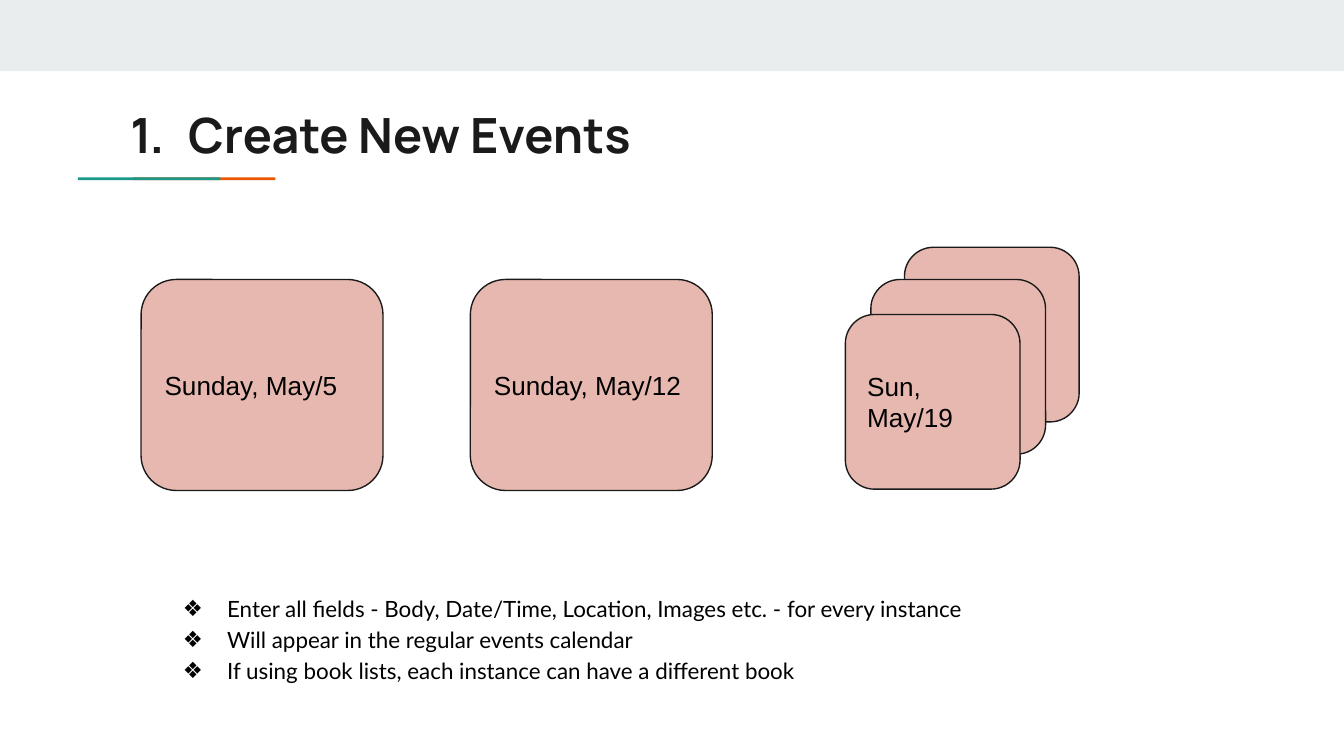
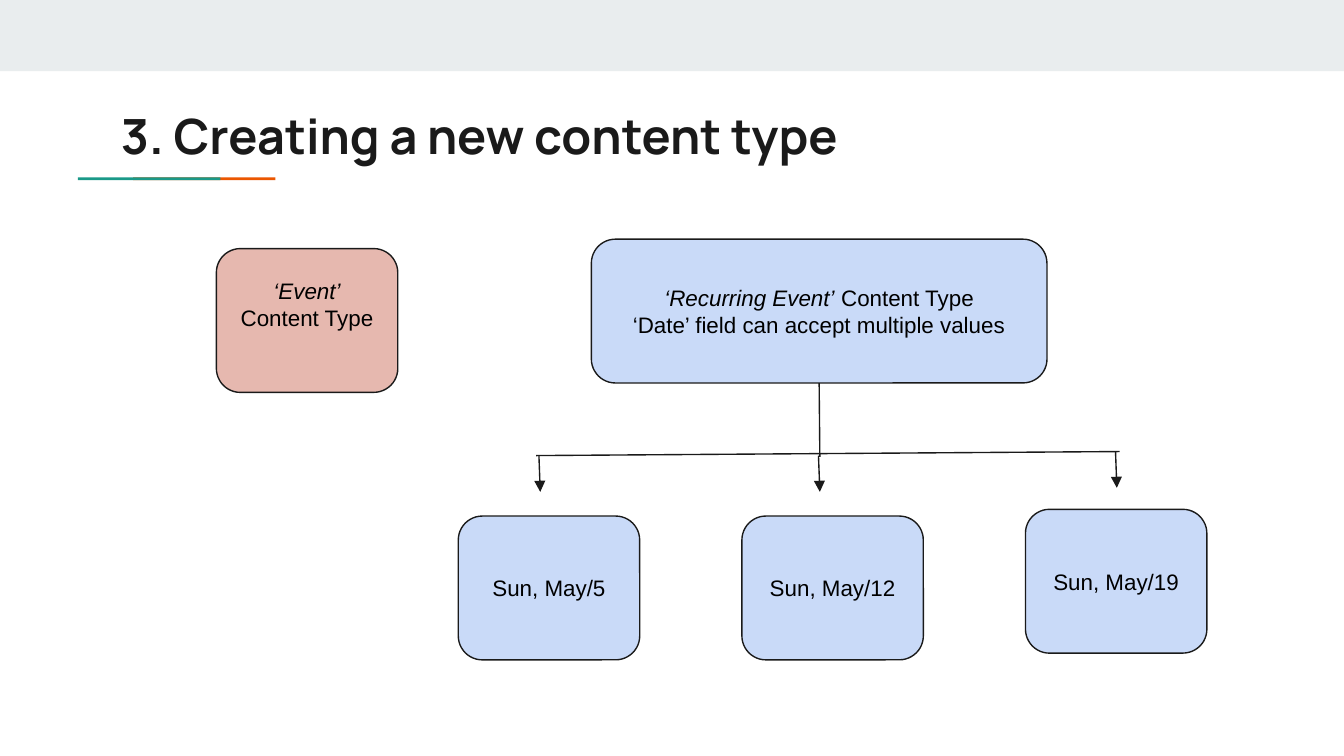
from dataclasses import dataclass

from lxml import etree
from pptx import Presentation
from pptx.dml.color import RGBColor
from pptx.enum.shapes import MSO_CONNECTOR, MSO_SHAPE
from pptx.enum.text import MSO_ANCHOR, MSO_AUTO_SIZE, PP_ALIGN
from pptx.oxml.ns import qn
from pptx.util import Inches, Pt

RECTANGLE = MSO_SHAPE.RECTANGLE
ROUNDED = MSO_SHAPE.ROUNDED_RECTANGLE
STRAIGHT = MSO_CONNECTOR.STRAIGHT
TOP, MIDDLE = MSO_ANCHOR.TOP, MSO_ANCHOR.MIDDLE
LEFT, CENTER = PP_ALIGN.LEFT, PP_ALIGN.CENTER
NO_AUTOFIT = MSO_AUTO_SIZE.NONE

SLIDE_WIDTH = Inches(10)
SLIDE_HEIGHT = SLIDE_WIDTH * 9 // 16
TITLE_AND_LIST, TITLE_ONLY = 1, 5
BOTTOM_SIDE = 2


@dataclass(frozen=True)
class Theme:
    band: str = "E9EDEE"
    teal: str = "1A9988"
    orange: str = "EB5600"
    ink: str = "1A1A1A"
    text: str = "000000"
    pink: str = "E6B8AF"
    blue: str = "C9DAF8"
    title_font: str = "Manrope"
    list_font: str = "Lato"
    box_font: str = "Arial"
    title_size: float = 26
    large_size: float = 14
    small_size: float = 12
    line_width: float = 0.75
    inset: float = 0.1


def rgb(color):
    return RGBColor.from_string(color)


def add_run(paragraph, text, *, font, size, color, bold=False, italic=False):
    run = paragraph.add_run()
    run.text = text
    run.font.name = font
    run.font.size = Pt(size)
    run.font.color.rgb = rgb(color)
    run.font.bold = bold
    run.font.italic = italic


def set_bullet(paragraph, tag, left, hanging, color, **attributes):
    """Give the paragraph a hanging bullet or number; set its spacing first."""
    properties = paragraph._p.get_or_add_pPr()
    properties.set("marL", str(Inches(left)))
    properties.set("indent", str(-Inches(hanging)))
    bullet_color = etree.SubElement(properties, qn("a:buClr"))
    etree.SubElement(bullet_color, qn("a:srgbClr"), val=color)
    etree.SubElement(properties, qn(tag), **attributes)


class Deck:
    def __init__(self, theme):
        self.theme = theme
        self.presentation = Presentation()
        self.presentation.slide_width = SLIDE_WIDTH
        self.presentation.slide_height = SLIDE_HEIGHT
        self.slide = None

    def add_slide(self, layout):
        theme = self.theme
        self.slide = self.presentation.slides.add_slide(
            self.presentation.slide_layouts[layout])
        self.add_shape(RECTANGLE, 0, 0, 10, 0.53, theme.band)
        for left, color in ((0.99, theme.orange), (0.58, theme.teal)):
            self.add_shape(RECTANGLE, left, 1.32, 1.06, 0.02, color)

    def add_shape(self, kind, left, top, width, height, fill):
        shape = self.slide.shapes.add_shape(
            kind, Inches(left), Inches(top), Inches(width), Inches(height))
        shape.shadow.inherit = False
        shape.fill.solid()
        shape.fill.fore_color.rgb = rgb(fill)
        shape.line.fill.background()
        return shape

    def prepare_frame(self, shape, anchor, bottom_inset=None):
        frame = shape.text_frame
        frame.word_wrap = True
        frame.auto_size = NO_AUTOFIT
        frame.vertical_anchor = anchor
        inset = Inches(self.theme.inset)
        frame.margin_left = frame.margin_top = frame.margin_right = inset
        frame.margin_bottom = inset if bottom_inset is None else Inches(bottom_inset)
        return frame

    def place(self, placeholder, left, top, width, height):
        placeholder.left, placeholder.top = Inches(left), Inches(top)
        placeholder.width, placeholder.height = Inches(width), Inches(height)
        return self.prepare_frame(placeholder, TOP)

    def add_title(self, text, top, numbered=False):
        theme = self.theme
        frame = self.place(self.slide.shapes.title, 0.8, top, 8.41, 0.59)
        paragraph = frame.paragraphs[0]
        paragraph.alignment = LEFT
        if numbered:
            set_bullet(paragraph, "a:buAutoNum", 0.5, 0.43, theme.ink,
                       type="arabicPeriod")
        add_run(paragraph, text, font=theme.title_font, size=theme.title_size,
                color=theme.ink, bold=True)

    def add_list(self, items, left, top, width, height):
        theme = self.theme
        frame = self.place(self.slide.placeholders[1], left, top, width, height)
        for index, item in enumerate(items):
            paragraph = frame.add_paragraph() if index else frame.paragraphs[0]
            paragraph.alignment = LEFT
            paragraph.line_spacing = 1.15
            paragraph.space_before = Pt(0)
            set_bullet(paragraph, "a:buChar", 0.5, 0.33, theme.text, char="❖")
            add_run(paragraph, item, font=theme.list_font,
                    size=theme.small_size, color=theme.text)

    def add_box(self, left, top, width, height, fill, lines=(), *, lead="",
                size=None, alignment=CENTER, bottom_inset=None):
        """Draw a rounded box; lead is the italic start of its first line."""
        theme = self.theme
        box = self.add_shape(ROUNDED, left, top, width, height, fill)
        box.line.color.rgb = rgb(theme.ink)
        box.line.width = Pt(theme.line_width)
        frame = self.prepare_frame(box, MIDDLE, bottom_inset)
        style = dict(font=theme.box_font, size=size or theme.small_size,
                     color=theme.text)
        for index, line in enumerate(lines):
            paragraph = frame.add_paragraph() if index else frame.paragraphs[0]
            paragraph.alignment = alignment
            if lead and index == 0:
                add_run(paragraph, lead, italic=True, **style)
            add_run(paragraph, line, **style)
        return box

    def add_line(self, start, end, arrow=False):
        connector = self.slide.shapes.add_connector(
            STRAIGHT, *(Inches(value) for value in (*start, *end)))
        connector.line.color.rgb = rgb(self.theme.ink)
        connector.line.width = Pt(self.theme.line_width)
        properties = connector._element.spPr
        if arrow:
            etree.SubElement(properties.get_or_add_ln(), qn("a:tailEnd"),
                             type="triangle")
        etree.SubElement(properties, qn("a:effectLst"))
        return connector


def build_new_events(deck):
    theme = deck.theme
    deck.add_slide(TITLE_AND_LIST)
    deck.add_title("Create New Events", 0.68, numbered=True)
    date_style = dict(size=theme.large_size, alignment=LEFT)
    for left, date in ((1.05, "Sunday, May/5"), (3.5, "Sunday, May/12")):
        deck.add_box(left, 2.08, 1.8, 1.57, theme.pink, [date], **date_style)
    for left, top, lines in ((6.73, 1.84, []), (6.48, 2.08, []),
                             (6.29, 2.34, ["Sun, May/19"])):
        deck.add_box(left, top, 1.3, 1.3, theme.pink, lines, **date_style)
    deck.add_list([
        "Enter all fields - Body, Date/Time, Location, Images etc. - for every instance",
        "Will appear in the regular events calendar",
        "If using book lists, each instance can have a different book",
    ], 1.09, 4.3, 7.83, 1.15)


def build_content_type(deck):
    theme = deck.theme
    box_width, box_height = 1.35, 1.07
    deck.add_slide(TITLE_ONLY)
    deck.add_title("3. Creating a new content type", 0.69)
    deck.add_box(1.61, 1.85, box_width, box_height, theme.pink,
                 [" Content Type"], lead="‘Event’", bottom_inset=0.34)
    recurring = deck.add_box(
        4.4, 1.78, 3.39, box_height, theme.blue,
        [" Content Type", "‘Date’ field can accept multiple values"],
        lead="‘Recurring Event’")
    dates = (("Sun, May/5", 3.84), ("Sun, May/12", 3.84), ("Sun, May/19", 3.79))
    for column, (date, top) in enumerate(dates):
        deck.add_box(3.41 + 2.11 * column, top, box_width, box_height,
                     theme.blue, [date])

    deck.add_line((3.99, 3.39), (8.33, 3.36))
    for x, y in ((4.01, 3.39), (6.09, 3.39), (8.3, 3.36)):
        deck.add_line((x, y), (x + 0.01, y + 0.27), arrow=True)
    trunk = deck.add_line((6.09, 2.85), (6.1, 3.4))
    trunk.begin_connect(recurring, BOTTOM_SIDE)


def main():
    deck = Deck(Theme())
    build_new_events(deck)
    build_content_type(deck)
    deck.presentation.save("out.pptx")


if __name__ == "__main__":
    main()
